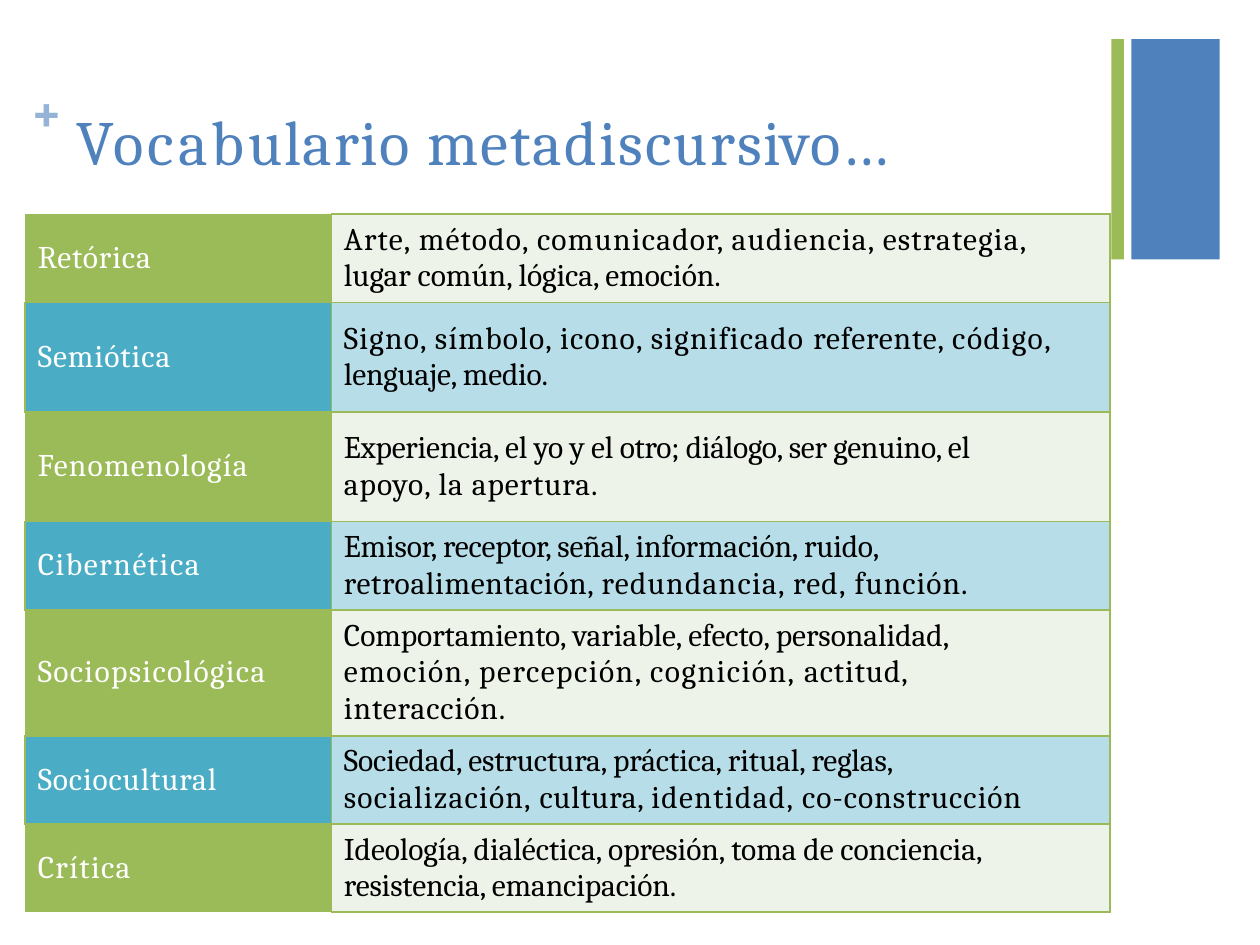
from lxml.etree import SubElement
from pptx import Presentation
from pptx.dml.color import RGBColor
from pptx.enum.shapes import MSO_SHAPE
from pptx.enum.text import MSO_ANCHOR, MSO_AUTO_SIZE, PP_ALIGN
from pptx.oxml.ns import qn
from pptx.util import Inches, Pt

FONT = "Cambria"
GREEN, BLUE, TEAL = "9BBA58", "4F81BC", "4AACC5"
PALE_GREEN, PALE_TEAL = "EEF3EA", "B7DEE8"
WHITE, BLACK, PLUS_BLUE = "FFFFFF", "000000", "94B3D6"
NO_STYLE = "{2D5ABB26-0587-4C30-8999-92F81FD0307C}"

COLUMN_WIDTHS = (2.43, 6.18, 0.13)
LONG_TEXT_MARGIN = 0.9
TRADITIONS = [
    (0.7, ("Retórica", 0.5), [
        [("Arte, método, comunicador, audiencia, estrategia,", 0.72)],
        [("lugar común, lógica, emoción.", -0.03)]]),
    (0.87, ("Semiótica", 0.6), [
        [("Signo, símbolo, icono, significado ", 0.72), ("referente, ", 0.5), ("código,", 0.9)],
        [("lenguaje, medio.", -0.1)]]),
    (0.87, ("Fenomenología", 0.7), [
        [("Experiencia, el yo y el otro; diálogo, ser genuino, el", -0.13)],
        [("apoyo, la apertura.", 0.57)]]),
    (0.7, ("Cibernética", 0.9), [
        [("Emisor, receptor, señal, información, ruido,", -0.12)],
        [("retroalimentación, ", 0.4), ("redundancia, red, ", 0.73), ("función.", 0.6)]]),
    (1, ("Sociopsicológica", 0.8), [
        [("Comportamiento, variable, efecto, personalidad, ", -0.03),
         ("emoción, percepción, cognición, ", 0.88), ("actitud, interacción.", 0.55)]]),
    (0.7, ("Sociocultural", 0.5), [
        [("Sociedad, estructura, práctica, ritual, reglas,", -0.05)],
        [("socialización, ", 0.7), ("cultura, ", 0.4), ("identidad, ", 0.8), ("co-construcción", 0.6)]]),
    (0.7, ("Crítica", 0.8), [
        [("Ideología, dialéctica, opresión, toma de conciencia,", -0.04)],
        [("resistencia, emancipación.", -0.08)]]),
]


def color(value):
    return RGBColor.from_string(value)


def add_run(paragraph, text, size, fill, spacing, bold=False):
    run = paragraph.add_run()
    run.text = text
    run.font.name = FONT
    run.font.size = Pt(size)
    run.font.bold = bold
    run.font.color.rgb = color(fill)
    properties = run.font._element
    properties.set("spc", str(round(spacing * 100)))
    return properties


def add_bar(slide, left, top, width, height, fill):
    bar = slide.shapes.add_shape(
        MSO_SHAPE.RECTANGLE, Inches(left), Inches(top), Inches(width), Inches(height))
    bar.shadow.inherit = False
    bar.fill.solid()
    bar.fill.fore_color.rgb = color(fill)
    bar.line.fill.background()


def add_corner_bars(slide, left, top, width, height):
    add_bar(slide, left, top, 0.1, height, GREEN)
    add_bar(slide, left + 0.16, top, width - 0.16, height, BLUE)


def fill_title(slide, left, top, width, height):
    title = slide.shapes.title
    title.left, title.top = Inches(left), Inches(top)
    title.width, title.height = Inches(width), Inches(height)
    frame = title.text_frame
    frame.margin_left = frame.margin_right = frame.margin_bottom = 0
    frame.margin_top = Inches(0.01)
    frame.vertical_anchor = MSO_ANCHOR.TOP
    frame.auto_size = MSO_AUTO_SIZE.SHAPE_TO_FIT_TEXT
    paragraph = frame.paragraphs[0]
    paragraph.alignment = PP_ALIGN.LEFT
    paragraph.space_before = Pt(1)
    paragraph._p.get_or_add_pPr().set("marL", str(Inches(0.04)))
    plus = add_run(paragraph, "+ ", 54, PLUS_BLUE, 0.4, True)
    plus.set("baseline", "36000")
    for text, spacing in [("V", -0.1), ("ocab", 2.2), ("ulario ", 0.9),
                          ("metadiscur", 1.2), ("sivo", 0.6), ("…", 8.9)]:
        add_run(paragraph, text, 36, BLUE, spacing)


def add_borders(cell, sides):
    properties = cell._tc.get_or_add_tcPr()
    for position, side in enumerate(sides):
        line = properties.makeelement(qn(f"a:ln{side}"), {"w": str(Pt(1))})
        solid = SubElement(line, qn("a:solidFill"))
        SubElement(solid, qn("a:srgbClr"), val=GREEN)
        properties.insert(position, line)


def fill_cell(cell, lines, text_color, fill, sides, right_margin=0):
    cell.fill.solid()
    cell.fill.fore_color.rgb = color(fill)
    cell.vertical_anchor = MSO_ANCHOR.MIDDLE
    cell.margin_left = Inches(0.1)
    cell.margin_right = Inches(right_margin)
    cell.margin_top = cell.margin_bottom = 0
    frame = cell.text_frame
    for index, runs in enumerate(lines):
        paragraph = frame.add_paragraph() if index else frame.paragraphs[0]
        for text, spacing in runs:
            add_run(paragraph, text, 18, text_color, spacing)
    add_borders(cell, sides)


def add_vocabulary_table(slide, left, top, width, height):
    table = slide.shapes.add_table(
        len(TRADITIONS), len(COLUMN_WIDTHS),
        Inches(left), Inches(top), Inches(width), Inches(height)).table
    table.first_row = table.horz_banding = False
    table._tbl.tblPr.find(qn("a:tableStyleId")).text = NO_STYLE
    for column, column_width in zip(table.columns, COLUMN_WIDTHS):
        column.width = Inches(column_width)
    for index, (row_height, name, words) in enumerate(TRADITIONS):
        table.rows[index].height = Inches(row_height)
        name_fill, words_fill = (TEAL, PALE_TEAL) if index % 2 else (GREEN, PALE_GREEN)
        name_sides = "LRTB" if index % 2 else ""
        margin = LONG_TEXT_MARGIN if len(words) == 1 else 0
        fill_cell(table.cell(index, 0), [[name]], WHITE, name_fill, name_sides)
        fill_cell(table.cell(index, 1), words, BLACK, words_fill, "LRTB", margin)
    edge = table.cell(0, 2)
    edge.merge(table.cell(len(TRADITIONS) - 1, 2))
    edge.fill.background()
    add_borders(edge, "L")


def main():
    presentation = Presentation()
    presentation.slide_width, presentation.slide_height = Inches(10), Inches(7.5)
    slide = presentation.slides.add_slide(presentation.slide_layouts[5])
    add_corner_bars(slide, 8.82, 0.31, 0.86, 1.75)
    fill_title(slide, 0.2, 0.55, 7.37, 0.63)
    add_vocabulary_table(slide, 0.2, 1.7, sum(COLUMN_WIDTHS), sum(row[0] for row in TRADITIONS))
    presentation.save("out.pptx")


if __name__ == "__main__":
    main()
